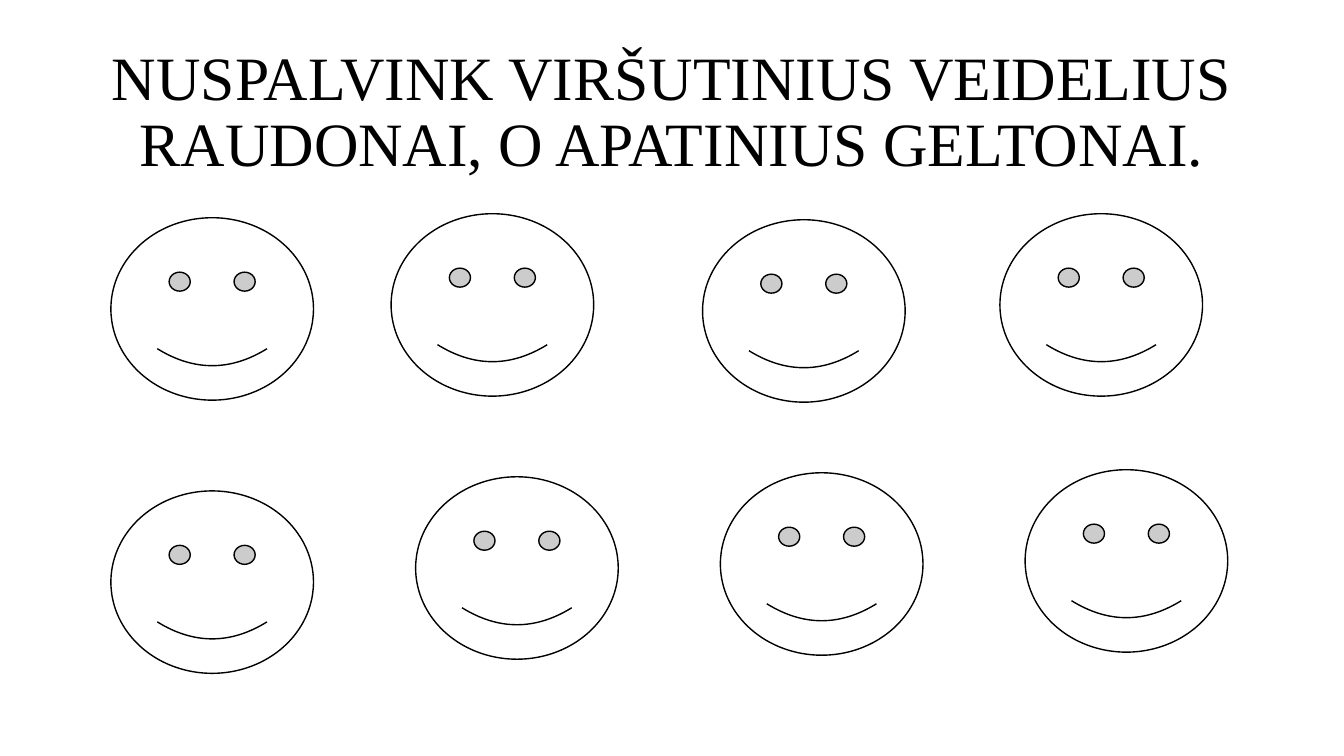
import pptx
import pptx.util
import pptx.dml.color
import pptx.enum.shapes
import pptx.enum.text
from dataclasses import dataclass


@dataclass(frozen=True)
class Theme:
    font: str = "Times New Roman"
    ink: str = "000000"
    paper: str = "FFFFFF"
    title_size: float = 44
    title_spacing: float = 0.9
    outline: float = 1


class Worksheet:
    COLUMNS = 160
    ROWS = 90

    def __init__(self, presentation, theme):
        self.presentation = presentation
        self.theme = theme
        self.slide = presentation.slides.add_slide(presentation.slide_layouts[5])

    def place(self, column, row, columns, rows):
        across = self.presentation.slide_width / self.COLUMNS
        down = self.presentation.slide_height / self.ROWS
        return (round(column * across), round(row * down),
                round(columns * across), round(rows * down))

    def color(self, value):
        return pptx.dml.color.RGBColor.from_string(value)

    def title(self, text, column, row, columns, rows):
        shape = self.slide.shapes.title
        shape.left, shape.top, shape.width, shape.height = self.place(column, row, columns, rows)
        frame = shape.text_frame
        frame.text = text
        frame.word_wrap = True
        frame.auto_size = pptx.enum.text.MSO_AUTO_SIZE.NONE
        frame.vertical_anchor = pptx.enum.text.MSO_ANCHOR.MIDDLE
        paragraph = frame.paragraphs[0]
        paragraph.alignment = pptx.enum.text.PP_ALIGN.CENTER
        paragraph.line_spacing = self.theme.title_spacing
        paragraph.font.name = self.theme.font
        paragraph.font.size = pptx.util.Pt(self.theme.title_size)
        paragraph.font.color.rgb = self.color(self.theme.ink)

    def face(self, column, row, columns=24.12, rows=21.72):
        shape = self.slide.shapes.add_shape(
            pptx.enum.shapes.MSO_SHAPE.SMILEY_FACE, *self.place(column, row, columns, rows))
        shape.shadow.inherit = False
        shape.fill.solid()
        shape.fill.fore_color.rgb = self.color(self.theme.paper)
        shape.line.color.rgb = self.color(self.theme.ink)
        shape.line.width = pptx.util.Pt(self.theme.outline)


def main():
    presentation = pptx.Presentation()
    presentation.slide_width = pptx.util.Inches(13.333)
    presentation.slide_height = pptx.util.Inches(7.5)
    worksheet = Worksheet(presentation, Theme())
    worksheet.title("NUSPALVINK VIRŠUTINIUS VEIDELIUS RAUDONAI, O APATINIUS GELTONAI.",
                    11, 4.8, 138, 17.4)
    left_column = 13.2
    upper_faces = [(left_column, 25.92), (46.56, 25.44), (83.64, 26.16), (119.04, 25.44)]
    lower_step = 36.28
    lower_faces = [(left_column + index * lower_step, row)
                   for index, row in enumerate((58.44, 56.76, 56.28, 55.92))]
    for column, row in upper_faces + lower_faces:
        worksheet.face(column, row)
    presentation.save("out.pptx")


if __name__ == "__main__":
    main()
